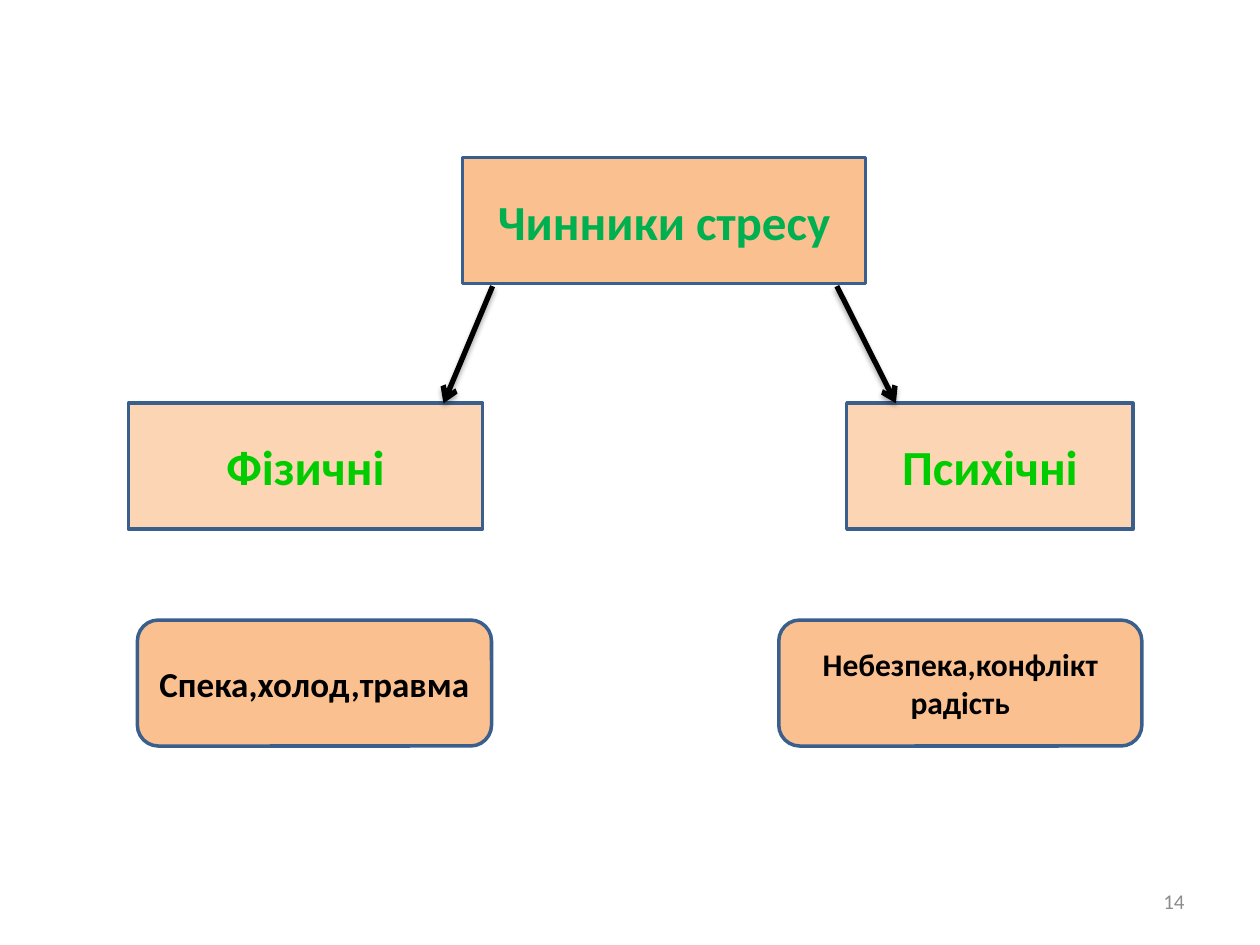
from lxml import etree
from pptx import Presentation
from pptx.dml.color import RGBColor
from pptx.enum.shapes import MSO_CONNECTOR, MSO_SHAPE
from pptx.enum.text import MSO_ANCHOR, PP_ALIGN
from pptx.oxml.ns import qn
from pptx.util import Cm, Pt

RECTANGLE = MSO_SHAPE.RECTANGLE
ROUNDED = MSO_SHAPE.ROUNDED_RECTANGLE
STRAIGHT = MSO_CONNECTOR.STRAIGHT
MIDDLE = MSO_ANCHOR.MIDDLE
CENTER, RIGHT = PP_ALIGN.CENTER, PP_ALIGN.RIGHT

PEACH = RGBColor(0xFA, 0xC0, 0x90)
LIGHT_PEACH = RGBColor(0xFC, 0xD5, 0xB5)
BORDER_BLUE = RGBColor(0x3A, 0x5F, 0x8C)
GREEN = RGBColor(0x00, 0xB0, 0x50)
BRIGHT_GREEN = RGBColor(0x00, 0xCC, 0x00)
BLACK = RGBColor(0, 0, 0)
GRAY = RGBColor(0x8C, 0x8C, 0x8C)

FONT = "Calibri"
BOX_HEIGHT = 2.54
FACTOR_TOP, KIND_TOP, EXAMPLE_TOP = 3.18, 8.13, 12.5
ARROW_TOP = 5.77


def write_text(frame, text, size, color, align, bold):
    frame.word_wrap = True
    frame.vertical_anchor = MIDDLE
    paragraph = frame.paragraphs[0]
    paragraph.text = text
    paragraph.alignment = align
    font = paragraph.font
    font.name = FONT
    font.size = Pt(size)
    font.bold = bold
    font.color.rgb = color


def add_box(slide, outline, left, top, width, fill, text, size, color):
    box = slide.shapes.add_shape(
        outline, Cm(left), Cm(top), Cm(width), Cm(BOX_HEIGHT))
    box.shadow.inherit = False
    box.fill.solid()
    box.fill.fore_color.rgb = fill
    box.line.color.rgb = BORDER_BLUE
    box.line.width = Pt(2)
    write_text(box.text_frame, text, size, color, CENTER, True)


def add_arrow(slide, start_x, end_x):
    arrow = slide.shapes.add_connector(
        STRAIGHT, Cm(start_x), Cm(ARROW_TOP), Cm(end_x), Cm(KIND_TOP))
    arrow.line.color.rgb = BLACK
    arrow.line.width = Pt(3)
    etree.SubElement(arrow.line._get_or_add_ln(), qn("a:tailEnd"), type="arrow")
    effects = etree.SubElement(arrow._element.spPr, qn("a:effectLst"))
    shadow = etree.SubElement(
        effects, qn("a:outerShdw"), blurRad=str(Pt(3.1)), dist=str(Pt(1.8)),
        dir="5400000", rotWithShape="0")
    shade = etree.SubElement(shadow, qn("a:srgbClr"), val=str(BLACK))
    etree.SubElement(shade, qn("a:alpha"), val="35000")


def add_page_number(slide, number):
    page_box = slide.shapes.add_textbox(
        Cm(18.21), Cm(17.65), Cm(5.92), Cm(1.02))
    write_text(page_box.text_frame, number, 12, GRAY, RIGHT, False)


def main():
    deck = Presentation()
    deck.slide_width, deck.slide_height = Cm(25.4), Cm(19.05)
    slide = deck.slides.add_slide(deck.slide_layouts[6])

    add_page_number(slide, "14")
    for left, width, kind in ((2.59, 7.14, "Фізичні"), (17.07, 5.77, "Психічні")):
        add_box(slide, RECTANGLE, left, KIND_TOP, width, LIGHT_PEACH,
                kind, 28, BRIGHT_GREEN)
    add_box(slide, RECTANGLE, 9.32, FACTOR_TOP, 8.13, PEACH,
            "Чинники стресу", 28, GREEN)
    for start_x, end_x in ((9.93, 8.94), (16.87, 18.06)):
        add_arrow(slide, start_x, end_x)
    for left, width, examples, size in (
            (2.77, 7.14, "Спека,холод,травма", 20),
            (15.7, 7.32, "Небезпека,конфлікт радість", 18)):
        add_box(slide, ROUNDED, left, EXAMPLE_TOP, width, PEACH,
                examples, size, BLACK)

    deck.save("out.pptx")


if __name__ == "__main__":
    main()
